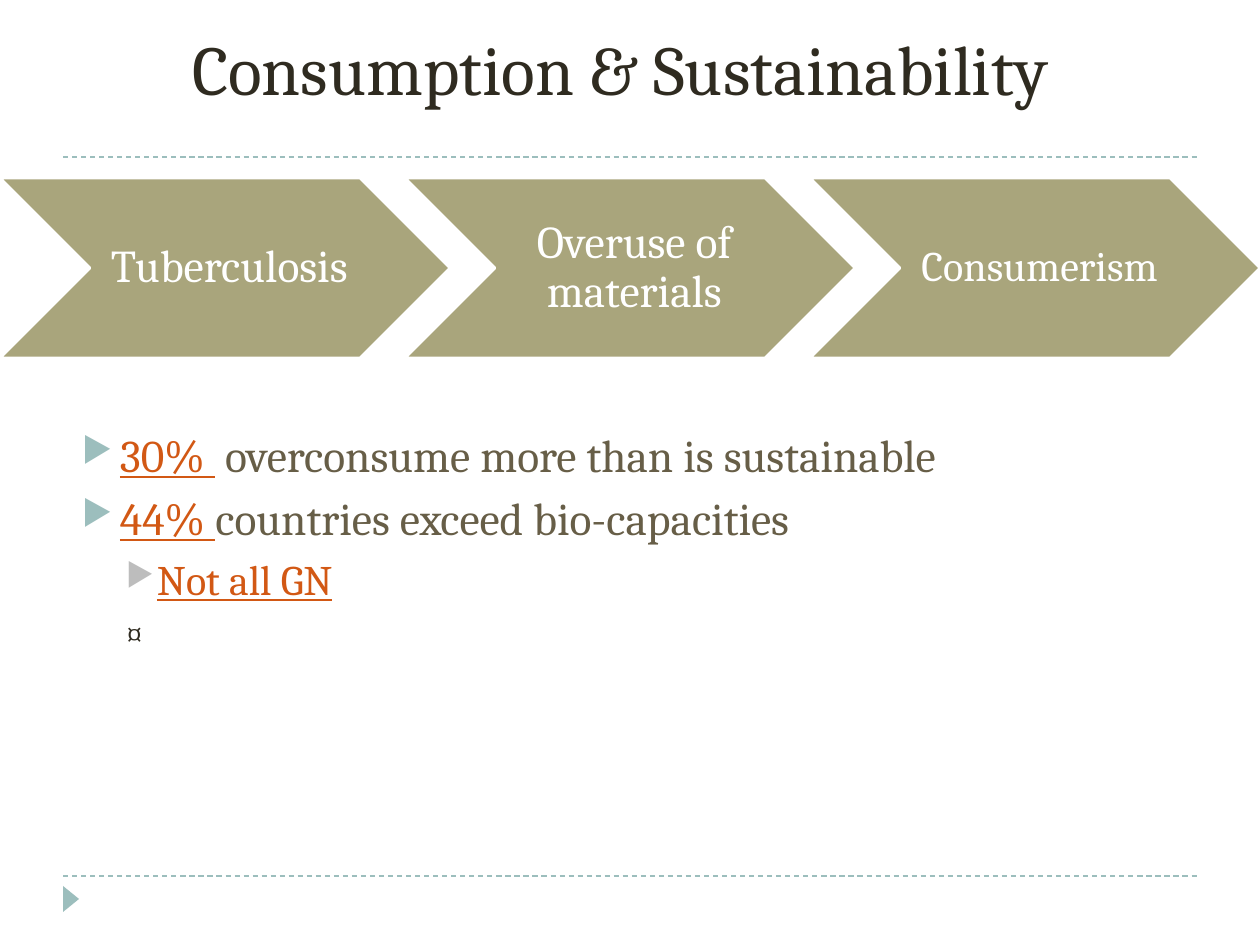
from lxml import etree
from pptx import Presentation
from pptx.dml.color import RGBColor
from pptx.enum import dml, shapes, text
from pptx.oxml import ns
from pptx.util import Emu, Pt

THEME = dict(
    font="Cambria", dark="2F2B20", body="675E47", link="D25814",
    teal="9CBEBD", gray="BDBDBD", olive="A9A57C", white="FFFFFF",
    title=40, large=26, small=24, note=18,
)


def px(n):
    return Emu(round(n * 914400 / 126))


def add_run(para, words, size, color, under=False):
    run = para.add_run()
    run.text = words
    font = run.font
    font.name, font.size = THEME["font"], Pt(THEME[size])
    font.color.rgb = RGBColor.from_string(THEME[color])
    font.underline = under


deck = Presentation()
deck.slide_width, deck.slide_height = px(1260), px(945)
slide = deck.slides.add_slide(deck.slide_layouts[6])
items = slide.shapes

# Dashed rules and corner marker
for y in (876, 157):
    rule = items.add_connector(shapes.MSO_CONNECTOR.STRAIGHT, px(63), px(y), px(1197), px(y))
    rule.line.color.rgb = RGBColor.from_string(THEME["teal"])
    rule.line.width = Pt(0.75)
    rule.line.dash_style = dml.MSO_LINE.DASH
    etree.SubElement(rule._element.spPr, ns.qn("a:effectLst"))

mark = items.add_shape(shapes.MSO_SHAPE.ISOSCELES_TRIANGLE, px(58), px(891), px(26), px(16))
mark.rotation = 90
mark.shadow.inherit = False
mark.fill.solid()
mark.fill.fore_color.rgb = RGBColor.from_string(THEME["teal"])
mark.line.fill.background()

# Title
title = items.add_textbox(px(53), px(0), px(1134), px(116)).text_frame
title.word_wrap = True
title.vertical_anchor = text.MSO_ANCHOR.BOTTOM
title.paragraphs[0].alignment = text.PP_ALIGN.CENTER
add_run(title.paragraphs[0], "Consumption & Sustainability", "title", "dark")

# Bulleted list: left margin, indent, bullet colour, runs
rows = [
    (76, -38, "teal", [("30% ", "large", "link", True),
                       (" overconsume more than is sustainable", "large", "body")]),
    (76, -38, "teal", [("44% ", "large", "link", True),
                       ("countries exceed bio-capacities", "large", "body")]),
    (113, -31, "gray", [("Not all GN", "small", "link", True)]),
    (82, 0, None, [("¤", "note", "dark")]),
]
body = items.add_textbox(px(44), px(427), px(1172), px(440)).text_frame
body.word_wrap = True
body.margin_left = body.margin_right = body.margin_top = body.margin_bottom = 0
for i, (left, hang, bullet, runs) in enumerate(rows):
    para = body.add_paragraph() if i else body.paragraphs[0]
    para.space_before = Pt(5 if i else 0)
    props = para._p.get_or_add_pPr()
    props.set("marL", str(px(left)))
    props.set("indent", str(px(hang)))
    if bullet:
        tint = etree.SubElement(props, ns.qn("a:buClr"))
        etree.SubElement(tint, ns.qn("a:srgbClr"), val=THEME[bullet])
        etree.SubElement(props, ns.qn("a:buSzPct"), val="76000")
        etree.SubElement(props, ns.qn("a:buChar"), char="▶")
    for part in runs:
        add_run(para, *part)

# Chevron steps
steps = [("Tuberculosis", "large"), ("Overuse of materials", "large"), ("Consumerism", "small")]
for i, (words, size) in enumerate(steps):
    step = items.add_shape(shapes.MSO_SHAPE.CHEVRON, px(405 * i), px(178), px(450), px(180))
    step.shadow.inherit = False
    step.fill.solid()
    step.fill.fore_color.rgb = RGBColor.from_string(THEME["olive"])
    step.line.color.rgb = RGBColor.from_string(THEME["white"])
    step.line.width = Pt(1.5)
    frame = step.text_frame
    frame.word_wrap = True
    frame.vertical_anchor = text.MSO_ANCHOR.MIDDLE
    frame.margin_left = px(14)
    frame.margin_right = frame.margin_top = frame.margin_bottom = px(5)
    para = frame.paragraphs[0]
    para.alignment = text.PP_ALIGN.CENTER
    para.line_spacing = 0.9
    add_run(para, words, size, "white")

deck.save("out.pptx")
